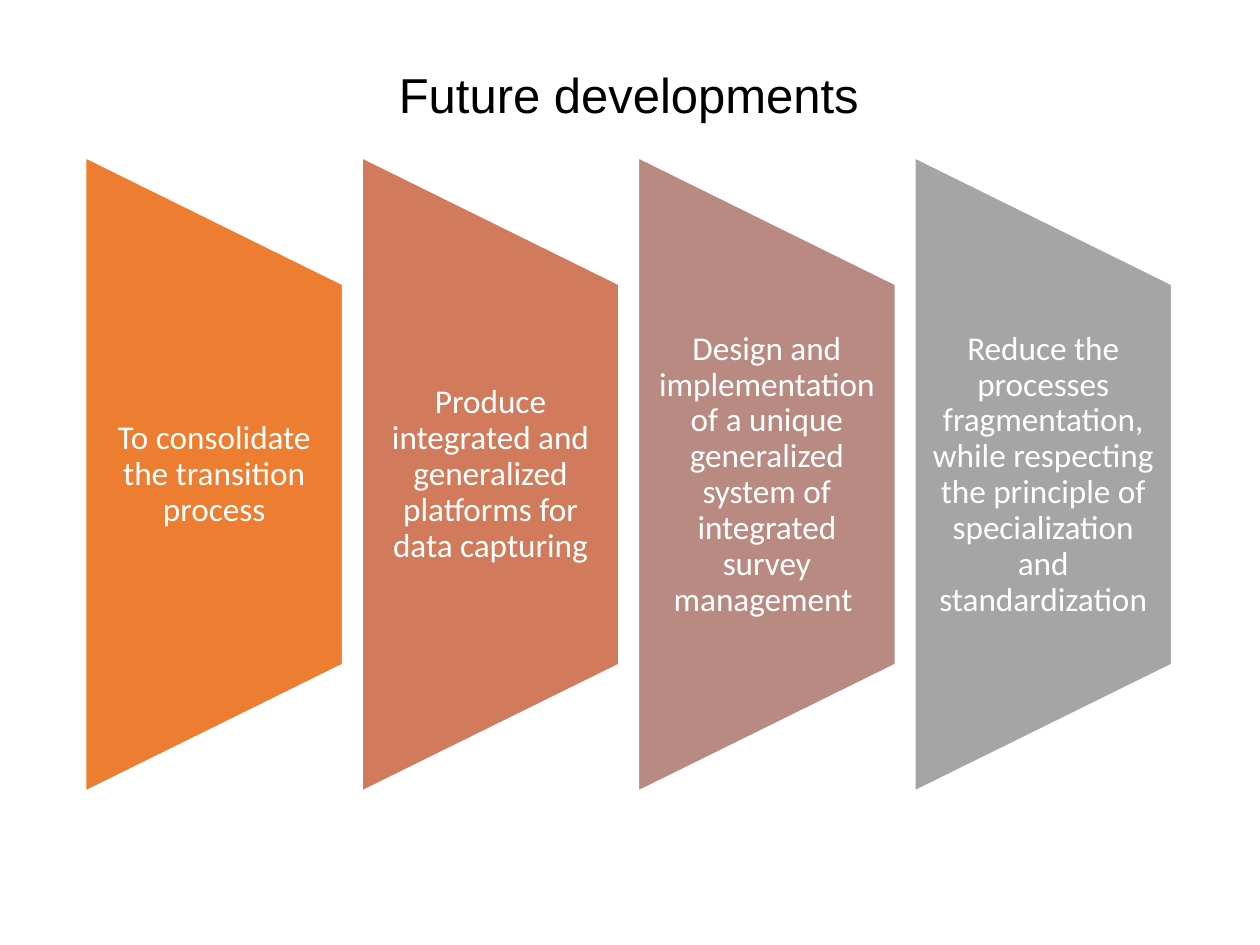
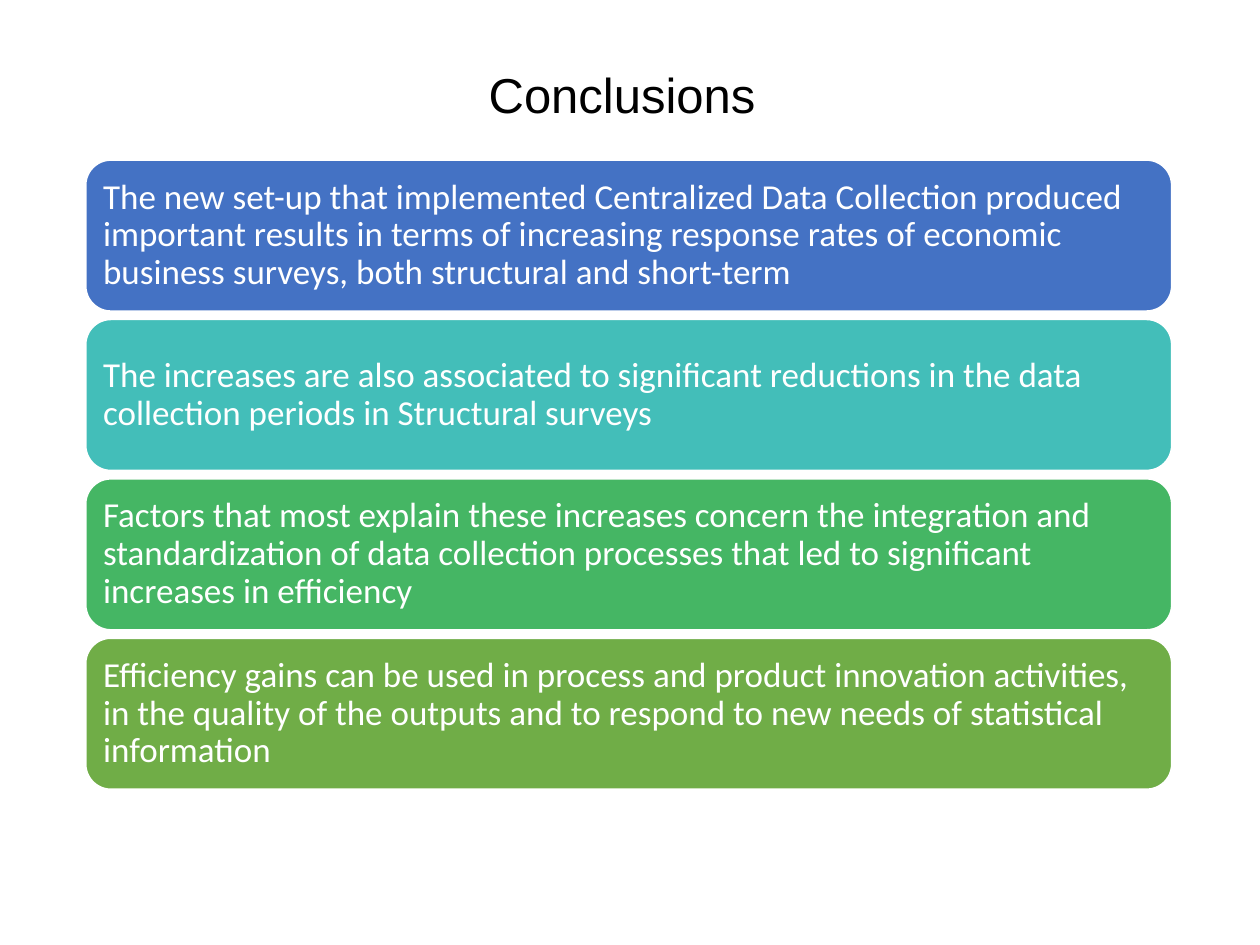
from pptx import Presentation
from pptx.dml.color import RGBColor
from pptx.enum.shapes import MSO_SHAPE
from pptx.enum.text import MSO_ANCHOR, MSO_AUTO_SIZE, PP_ALIGN
from pptx.util import Inches, Pt

TRAPEZOID = MSO_SHAPE.FLOWCHART_MANUAL_OPERATION
ROUNDED = MSO_SHAPE.ROUNDED_RECTANGLE
MIDDLE = MSO_ANCHOR.MIDDLE
NO_AUTOFIT = MSO_AUTO_SIZE.NONE
CENTER, LEFT = PP_ALIGN.CENTER, PP_ALIGN.LEFT

BLACK = RGBColor(0x00, 0x00, 0x00)
WHITE = RGBColor(0xFF, 0xFF, 0xFF)
ORANGE = RGBColor(0xED, 0x7D, 0x31)
TERRACOTTA = RGBColor(0xD1, 0x7B, 0x5C)
DUSTY_ROSE = RGBColor(0xB9, 0x8A, 0x82)
GRAY = RGBColor(0xA5, 0xA5, 0xA5)
BLUE = RGBColor(0x44, 0x72, 0xC4)
TEAL = RGBColor(0x43, 0xBE, 0xB9)
GREEN = RGBColor(0x45, 0xB6, 0x64)
OLIVE = RGBColor(0x70, 0xAD, 0x47)

TITLE_FONT, BODY_FONT = "Arial", "Calibri"
MARGIN, CONTENT_WIDTH = 0.68, 8.62
TITLE_TOP, TITLE_HEIGHT = 0.3, 0.95
PANEL_TOP, PANEL_WIDTH, PANEL_HEIGHT = 1.25, 2.04, 5.03
PANEL_TEXT_TOP, PANEL_TEXT_HEIGHT = 2.26, 3.02
BAR_TOP, BAR_HEIGHT, BAR_STEP = 1.27, 1.2, 1.265

DEVELOPMENTS = [
    (ORANGE, "To consolidate the transition process"),
    (TERRACOTTA, "Produce integrated and generalized platforms for data capturing"),
    (DUSTY_ROSE, "Design and implementation of a unique generalized system of "
                 "integrated survey management "),
    (GRAY, "Reduce the processes fragmentation, while respecting the principle of "
           "specialization and standardization"),
]
CONCLUSIONS = [
    (BLUE, "The new set-up that implemented Centralized Data Collection produced "
           "important results in terms of increasing response rates of economic "
           "business surveys, both structural and short-term"),
    (TEAL, "The increases are also associated to significant reductions in the data "
           "collection periods in Structural surveys"),
    (GREEN, "Factors that most explain these increases concern the integration and "
            "standardization of data collection processes that led to significant "
            "increases in efficiency"),
    (OLIVE, "Efficiency gains can be used in process and product innovation activities, "
            "in the quality of the outputs and to respond to new needs of statistical "
            "information"),
]


def write_text(holder, text, size, font_name, color, align, insets):
    """Fill a text frame with one vertically centred paragraph."""
    side, vertical = (Inches(inset) for inset in insets)
    frame = holder.text_frame
    frame_format = {
        "word_wrap": True, "auto_size": NO_AUTOFIT, "vertical_anchor": MIDDLE,
        "margin_left": side, "margin_right": side,
        "margin_top": vertical, "margin_bottom": vertical,
    }
    for name, value in frame_format.items():
        setattr(frame, name, value)
    paragraph = frame.paragraphs[0]
    paragraph.alignment = align
    paragraph.line_spacing = 0.9
    run = paragraph.add_run()
    run.text = text
    run.font.name = font_name
    run.font.size = Pt(size)
    run.font.color.rgb = color


def add_titled_slide(prs, heading):
    """Add a title-only slide with the shared title style."""
    slide = prs.slides.add_slide(prs.slide_layouts[5])
    title = slide.shapes.title
    place = {"left": MARGIN, "top": TITLE_TOP,
             "width": CONTENT_WIDTH, "height": TITLE_HEIGHT}
    for name, value in place.items():
        setattr(title, name, Inches(value))
    write_text(title, heading, 28, TITLE_FONT, BLACK, CENTER, (0.1, 0.05))
    return slide


def add_block(slide, preset, left, top, width, height, color):
    """Add a filled shape with a thin white outline."""
    block = slide.shapes.add_shape(
        preset, Inches(left), Inches(top), Inches(width), Inches(height))
    block.shadow.inherit = False
    block.fill.solid()
    block.fill.fore_color.rgb = color
    block.line.color.rgb = WHITE
    block.line.width = Pt(1)
    return block


def add_panel(slide, left, color, text):
    """Add a trapezoid turned on its side with upright text over it."""
    shift = (PANEL_HEIGHT - PANEL_WIDTH) / 2
    panel = add_block(slide, TRAPEZOID, left - shift, PANEL_TOP + shift,
                      PANEL_HEIGHT, PANEL_WIDTH, color)
    panel.rotation = 270
    label = slide.shapes.add_textbox(
        Inches(left), Inches(PANEL_TEXT_TOP),
        Inches(PANEL_WIDTH), Inches(PANEL_TEXT_HEIGHT))
    write_text(label, text, 19, BODY_FONT, WHITE, CENTER, (0.13, 0))


def add_bar(slide, top, color, text):
    """Add a full-width rounded bar holding one conclusion."""
    bar = add_block(slide, ROUNDED, MARGIN, top, CONTENT_WIDTH, BAR_HEIGHT, color)
    write_text(bar, text, 20, BODY_FONT, WHITE, LEFT, (0.08, 0.08))


def main():
    """Build both slides and save the presentation."""
    prs = Presentation()
    prs.slide_width, prs.slide_height = Inches(10), Inches(7.5)

    future = add_titled_slide(prs, "Future developments")
    panel_step = (CONTENT_WIDTH - PANEL_WIDTH) / (len(DEVELOPMENTS) - 1)
    for index, (color, text) in enumerate(DEVELOPMENTS):
        add_panel(future, MARGIN + index * panel_step, color, text)

    closing = add_titled_slide(prs, "Conclusions ")
    for index, (color, text) in enumerate(CONCLUSIONS):
        add_bar(closing, BAR_TOP + index * BAR_STEP, color, text)

    prs.save("out.pptx")


if __name__ == "__main__":
    main()
